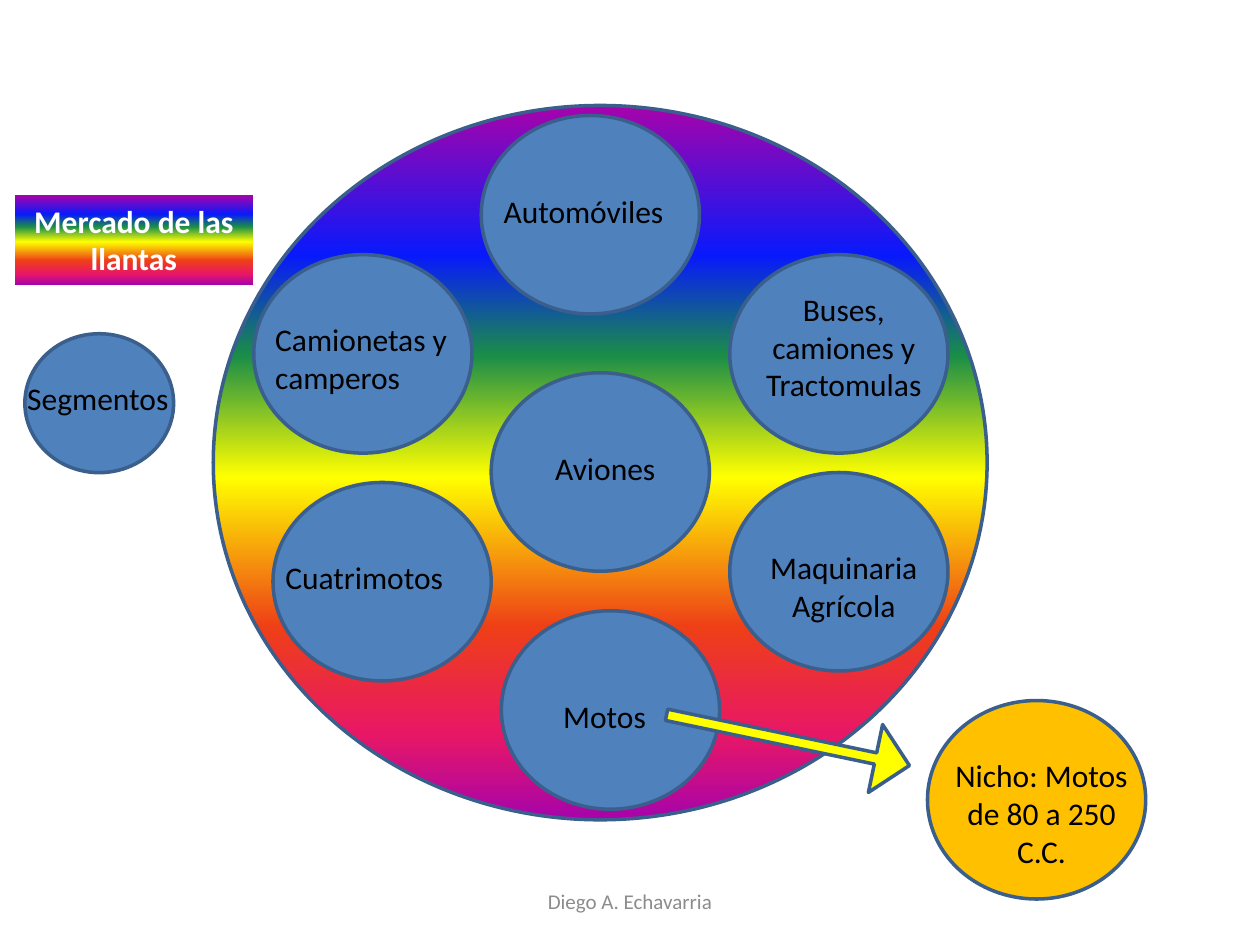
"""Build the slide of tyre market segments and the chosen niche."""
from lxml import etree
from pptx import Presentation
from pptx.dml.color import RGBColor
from pptx.enum.shapes import MSO_SHAPE
from pptx.enum.text import MSO_ANCHOR, PP_ALIGN
from pptx.oxml.ns import qn
from pptx.util import Pt

OVAL, RECT, ARROW = MSO_SHAPE.OVAL, MSO_SHAPE.RECTANGLE, MSO_SHAPE.RIGHT_ARROW
LEFT, CENTER = PP_ALIGN.LEFT, PP_ALIGN.CENTER
TOP, MIDDLE = MSO_ANCHOR.TOP, MSO_ANCHOR.MIDDLE
BLACK = RGBColor(0x00, 0x00, 0x00)
WHITE = RGBColor(0xFF, 0xFF, 0xFF)
GRAY = RGBColor(0x8C, 0x8C, 0x8C)
BLUE = RGBColor(0x4F, 0x81, 0xBD)
NAVY = RGBColor(0x3A, 0x5F, 0x8C)
GOLD = RGBColor(0xFF, 0xC0, 0x00)
YELLOW = RGBColor(0xFF, 0xFF, 0x00)
PURPLE = RGBColor(0xA6, 0x03, 0xAB)
RAINBOW = [
    (0, PURPLE),
    (21, RGBColor(0x08, 0x19, 0xFB)),
    (35, RGBColor(0x1A, 0x8D, 0x48)),
    (52, YELLOW),
    (73, RGBColor(0xEE, 0x3F, 0x17)),
    (88, RGBColor(0xE8, 0x17, 0x66)),
    (100, PURPLE),
]
DISC = (124.7, 113.4)
WIDE = 130.4
ROWS = {1: 29, 2: 51, 3: 72.7}
SPOTS = [(275, 66), (280.7, 213), (417, 145.5), (417, 270),
         (286.5, 349), (156, 275.7), (145, 145.5)]
LABELS = [
    ("Automóviles", 280.7, 106, WIDE, 1, LEFT),
    ("Cuatrimotos", 156, 315.5, WIDE, 1, LEFT),
    ("Motos", 314.7, 394.8, 85, 1, LEFT),
    ("Maquinaria Agrícola", 417, 309.8, WIDE, 2, CENTER),
    ("Buses, camiones y Tractomulas", 417, 162, WIDE, 3, CENTER),
    ("Aviones", 280.7, 253, WIDE, 1, CENTER),
    ("Camionetas y camperos", 150.2, 179.3, WIDE, 2, LEFT),
]


class Board:
    """Hold the style and the current slide."""

    font = "Calibri"
    size = 18

    def __init__(self, slide):
        self.slide = slide

    def shape(self, kind, box, fill, line=NAVY):
        """Add a preset shape with a solid or graded fill."""
        shape = self.slide.shapes.add_shape(kind, *map(Pt, box))
        shape.shadow.inherit = False
        if isinstance(fill, list):
            self.grade(shape, fill)
        else:
            shape.fill.solid()
            shape.fill.fore_color.rgb = fill
        if line is None:
            shape.line.fill.background()
        else:
            shape.line.color.rgb = line
            shape.line.width = Pt(2)
        return shape

    def grade(self, shape, stops):
        """Fill a shape from top to bottom through the given stops."""
        shape.fill.gradient()
        shape.fill.gradient_angle = 270
        group = shape._element.spPr.find(qn("a:gradFill")).find(qn("a:gsLst"))
        for old in list(group):
            group.remove(old)
        for place, color in stops:
            stop = etree.SubElement(group, qn("a:gs"), pos=str(place * 1000))
            etree.SubElement(stop, qn("a:srgbClr"), val=str(color))

    def text(self, shape, words, align=CENTER, anchor=TOP, **style):
        """Put styled text in a shape."""
        frame = shape.text_frame
        frame.word_wrap = True
        frame.vertical_anchor = anchor
        line = frame.paragraphs[0]
        line.alignment = align
        run = line.add_run()
        run.text = words
        look = {"name": self.font, "size": Pt(self.size), "bold": False}
        color = style.pop("color", BLACK)
        for key, value in {**look, **style}.items():
            setattr(run.font, key, value)
        run.font.color.rgb = color

    def label(self, words, left, top, width, rows=1, align=LEFT, **style):
        """Add a text box high enough for its rows."""
        box = map(Pt, (left, top, width, ROWS[rows]))
        self.text(self.slide.shapes.add_textbox(*box), words, align, **style)


def main():
    """Draw the slide and save it."""
    deck = Presentation()
    deck.slide_width, deck.slide_height = Pt(720), Pt(540)
    board = Board(deck.slides.add_slide(deck.slide_layouts[6]))

    board.label("Diego A. Echavarria", 246, 500.5, 228, 1, CENTER,
                anchor=MIDDLE, size=Pt(12), color=GRAY)
    board.shape(OVAL, (121.9, 60.3, 442.2, 408.2), RAINBOW)
    market = board.shape(RECT, (8.5, 111.7, 136, 51), RAINBOW, None)
    board.text(market, "Mercado de las llantas", color=WHITE, bold=True)

    for spot in SPOTS:
        board.shape(OVAL, spot + DISC, BLUE)
    for label in LABELS:
        board.label(*label)

    board.shape(OVAL, (14.2, 190.7, 85, 79.4), BLUE)
    board.label("Segmentos", 8.5, 213, WIDE)

    arrow = board.shape(ARROW, (379.4, 403.2, 141.8, 39.6), YELLOW)
    arrow.rotation = 11.8
    arrow.adjustments[0] = 0.166
    arrow.adjustments[1] = 0.5
    board.shape(OVAL, (530, 400.3) + DISC, GOLD)
    board.label("Nicho: Motos de 80 a 250 C.C.", 530, 428.7, WIDE, 3, CENTER)
    deck.save("out.pptx")


if __name__ == "__main__":
    main()
